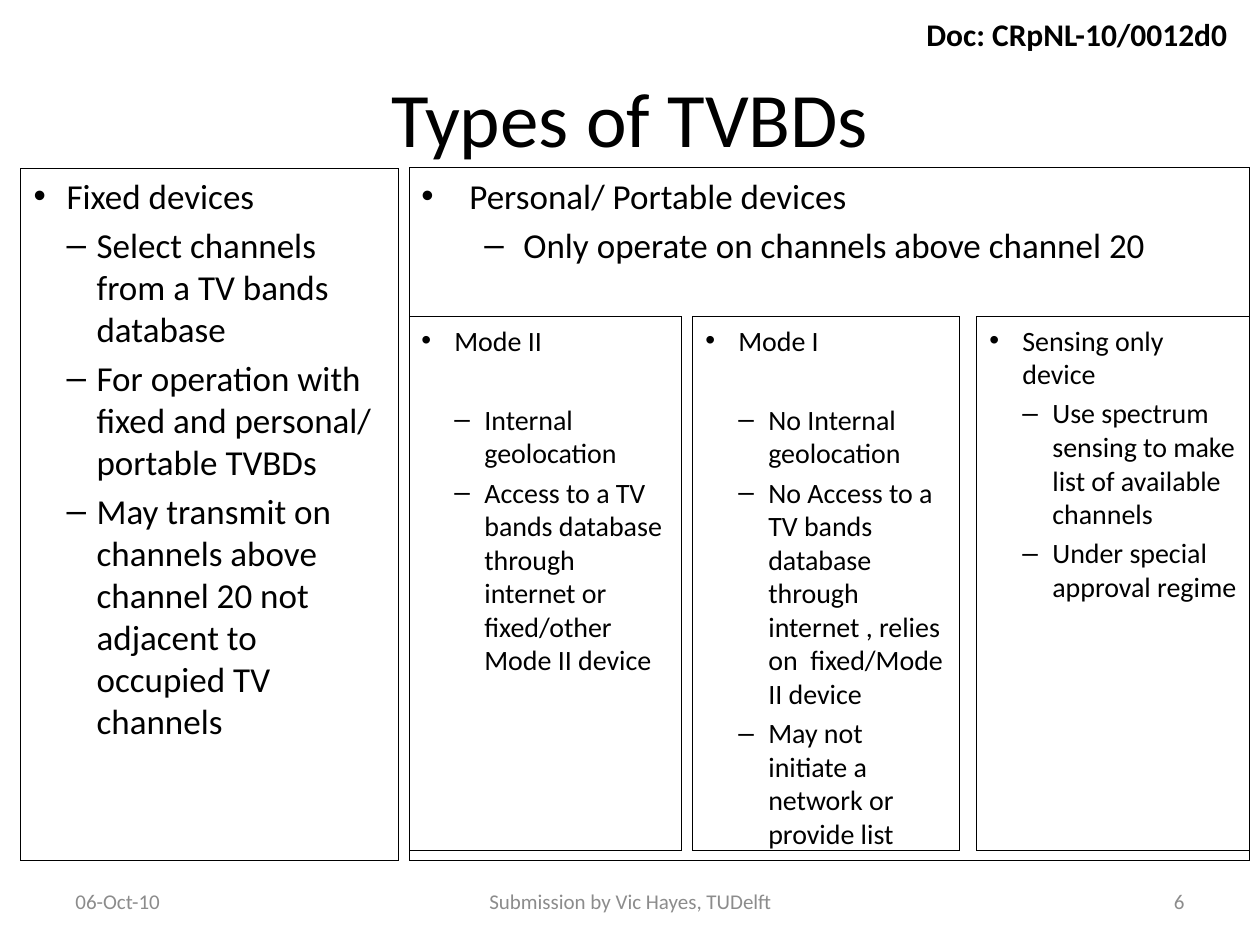
from lxml import etree
from pptx import Presentation
from pptx.dml.color import RGBColor
from pptx.enum import text
from pptx.oxml import ns
from pptx.util import Emu, Pt

BLACK = RGBColor(0x00, 0x00, 0x00)
GREY = RGBColor(0x8C, 0x8C, 0x8C)
FONT = "Calibri"
PX = 914400 / 126
LEFT, CENTER, RIGHT = text.PP_ALIGN.LEFT, text.PP_ALIGN.CENTER, text.PP_ALIGN.RIGHT

TITLE = "Types of TVBDs"
DOC_NUMBER = "Doc: CRpNL-10/0012d0"
FIXED = ("Fixed devices", [
    "Select channels from a TV bands database",
    "For operation with fixed and personal/ portable TVBDs",
    "May transmit on channels above channel 20 not adjacent to occupied TV channels",
])
PORTABLE = ("Personal/ Portable devices", ["Only operate on channels above channel 20"])
# heading, items, width, points before the first item
MODES = [
    ("Mode II", [
        "Internal geolocation",
        "Access to a TV bands database through internet or fixed/other Mode II device",
    ], 273, 26),
    ("Mode I", [
        "No Internal geolocation",
        "No Access to a TV bands database through internet , relies on  fixed/Mode II device",
        "May not initiate a network or provide list",
    ], 267, 26),
    ("Sensing only device", [
        "Use spectrum sensing to make list of available channels",
        "Under special approval regime",
    ], 273, None),
]
FOOTERS = [
    ("06-Oct-10", 63, 294, LEFT),
    ("Submission by Vic Hayes, TUDelft", 431, 399, CENTER),
    ("6", 903, 294, RIGHT),
]
PANEL_TOP, PANEL_HEIGHT = 168, 693
PORTABLE_LEFT = 409
MODE_TOP, MODE_HEIGHT, MODE_STEP = 317, 534, 284
NARROW_INDENTS = [(33, -33), (63, -30)]  # left margin and first line, by level
WIDE_INDENTS = [(48, -48), (102, -39)]
BULLETS = "•–"


def px(value):
    return Emu(round(value * PX))


def place(box, left, top, width, height):
    box.left, box.top, box.width, box.height = map(px, (left, top, width, height))


def write(para, words, size, color=BLACK, bold=False, align=LEFT):
    para.alignment = align
    span = para.add_run()
    span.text = words
    span.font.name, span.font.size, span.font.bold = FONT, Pt(size), bold
    span.font.color.rgb = color


def add_label(page, words, area, anchor=text.MSO_ANCHOR.MIDDLE, wrap=True, **style):
    box = page.shapes.add_textbox(*map(px, area))
    box.text_frame.word_wrap = wrap
    box.text_frame.vertical_anchor = anchor
    write(box.text_frame.paragraphs[0], words, **style)


def set_bullet(para, level, indent):
    para.level = level
    props = para._p.get_or_add_pPr()
    props.set("marL", str(px(indent[0])))
    props.set("indent", str(px(indent[1])))
    etree.SubElement(props, ns.qn("a:buFont")).set("typeface", "Arial")
    etree.SubElement(props, ns.qn("a:buChar")).set("char", BULLETS[level])


def fill_panel(box, heading, items, size, indents=NARROW_INDENTS, first_gap=None):
    """Outline the box thinly and write a heading with its second-level items."""
    box.line.color.rgb = BLACK
    frame = box.text_frame
    frame.word_wrap = True
    frame.auto_size = text.MSO_AUTO_SIZE.NONE
    frame.vertical_anchor = text.MSO_ANCHOR.TOP
    for index, words in enumerate([heading, *items]):
        para = frame.add_paragraph() if index else frame.paragraphs[0]
        level = min(index, 1)
        gap = first_gap if index == 1 and first_gap else size * 0.2
        para.space_before = Pt(gap)
        set_bullet(para, level, indents[level])
        write(para, words, size)


def add_panel(page, area, *content, **style):
    fill_panel(page.shapes.add_textbox(*map(px, area)), *content, **style)


def main():
    deck = Presentation()
    deck.slide_width, deck.slide_height = px(1260), px(945)
    page = deck.slides.add_slide(deck.slide_layouts[1])

    add_label(page, DOC_NUMBER, (914, 9, 331, 50), anchor=text.MSO_ANCHOR.TOP,
              wrap=False, size=18, bold=True)
    title, body = page.placeholders
    place(title, 63, 38, 1134, 157)
    title.text_frame.vertical_anchor = text.MSO_ANCHOR.MIDDLE
    write(title.text_frame.paragraphs[0], TITLE, 44, align=CENTER)

    place(body, 21, PANEL_TOP, 378, PANEL_HEIGHT)
    fill_panel(body, *FIXED, size=20)
    add_panel(page, (PORTABLE_LEFT, PANEL_TOP, 841, PANEL_HEIGHT), *PORTABLE,
              size=20, indents=WIDE_INDENTS)
    for column, (heading, items, width, gap) in enumerate(MODES):
        left = PORTABLE_LEFT + column * MODE_STEP
        add_panel(page, (left, MODE_TOP, width, MODE_HEIGHT), heading, items,
                  size=16, first_gap=gap)

    for words, left, width, align in FOOTERS:
        add_label(page, words, (left, 876, width, 50), size=12, color=GREY, align=align)
    deck.save("out.pptx")


if __name__ == "__main__":
    main()
